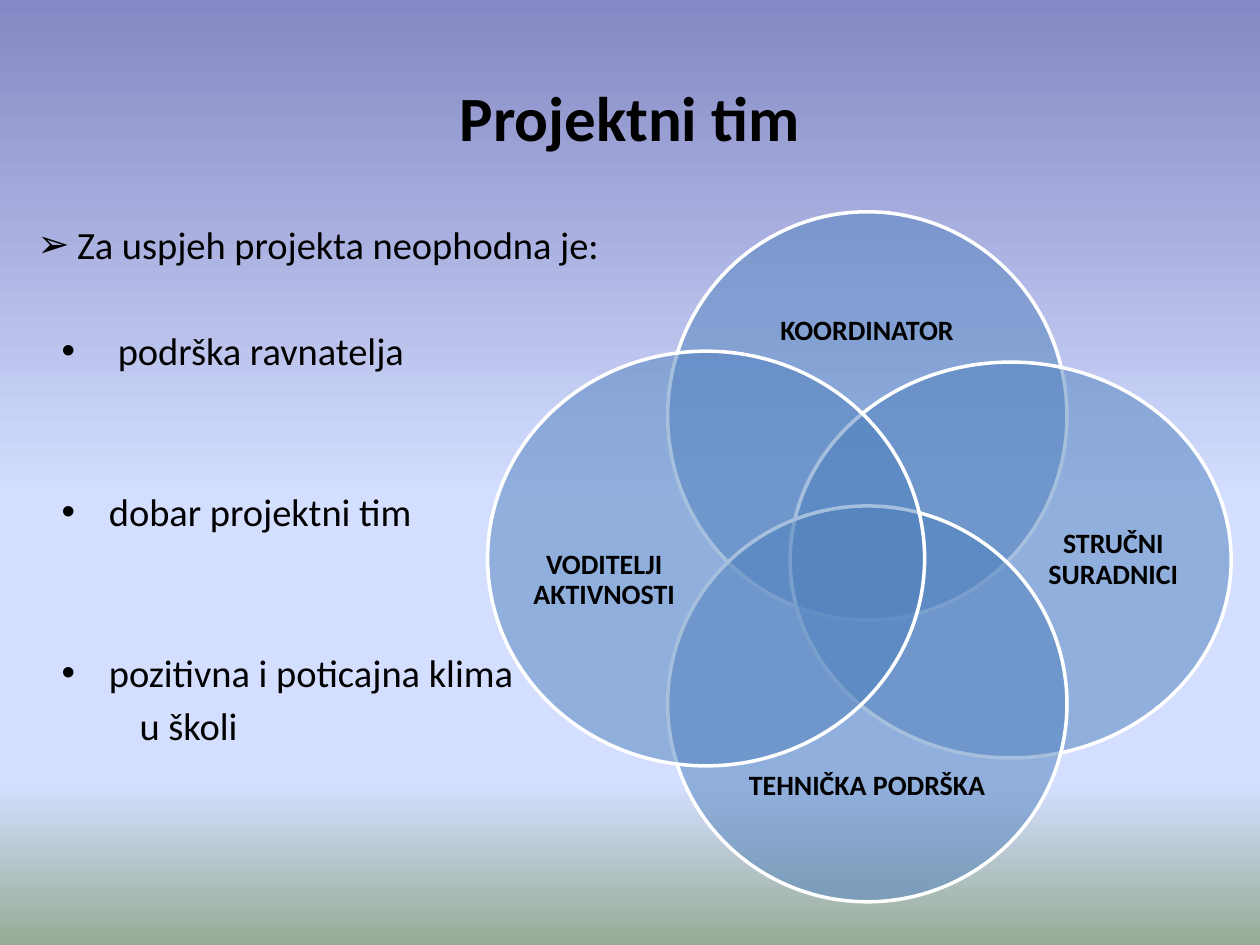
from lxml import etree
from pptx import Presentation
from pptx import util as u
from pptx.dml.color import RGBColor
from pptx.enum import shapes, text
from pptx.oxml.ns import qn

COLORS = {"text": "000000", "circle": "4F81BD", "outline": "FFFFFF"}
BACKGROUND_STOPS = [(0, "8488C4"), (53, "D4DEFF"), (83, "D4DEFF"), (100, "96AB94")]
FONT = "Calibri"


def format_runs(paragraph, size, bold=False):
    for run in paragraph.runs:
        run.font.name = FONT
        run.font.size = u.Pt(size)
        run.font.bold = bold
        run.font.color.rgb = RGBColor.from_string(COLORS["text"])


presentation = Presentation()
presentation.slide_width = u.Cm(25.4)
presentation.slide_height = u.Cm(19.05)
slide = presentation.slides.add_slide(presentation.slide_layouts[1])

# Background: vertical gradient
background = slide.background.fill
background.gradient()
background.gradient_angle = 270
stop_list = slide.element.find(".//" + qn("a:gsLst"))
for stop in list(stop_list):
    stop_list.remove(stop)
for position, color in BACKGROUND_STOPS:
    stop = etree.SubElement(stop_list, qn("a:gs"), pos=str(position * 1000))
    etree.SubElement(stop, qn("a:srgbClr"), val=color)

# Title
title = slide.shapes.title
title.left, title.top, title.width, title.height = u.Cm(1.27), u.Cm(0.76), u.Cm(22.86), u.Cm(3.18)
title.text_frame.text = "Projektni tim"
title.text_frame.vertical_anchor = text.MSO_ANCHOR.MIDDLE
title.text_frame.paragraphs[0].alignment = text.PP_ALIGN.CENTER
format_runs(title.text_frame.paragraphs[0], 36, bold=True)

# List: text, bullet, left margin and first-line indent in cm, space before in pt
items = [
    ("Za uspjeh projekta neophodna je:", "➢", 1.3, -0.8, 3.9),
    ("podrška ravnatelja", "•", 2.12, -1.13, 34.6),
    ("dobar projektni tim", "•", 1.94, -0.95, 65.4),
    ("pozitivna i poticajna klima", "•", 1.94, -0.95, 65.4),
    ("u školi", None, 2.56, 0, 3.9),
]
body = slide.placeholders[1]
body.left, body.top, body.width, body.height = u.Cm(0), u.Cm(4.32), u.Cm(12.5), u.Cm(12.57)
body.text_frame.text = "\n".join(item[0] for item in items)
body.text_frame.auto_size = text.MSO_AUTO_SIZE.NONE
for paragraph, (_, bullet, margin, indent, space) in zip(body.text_frame.paragraphs, items):
    paragraph.space_before = u.Pt(space)
    format_runs(paragraph, 22)
    properties = paragraph._p.get_or_add_pPr()
    properties.set("marL", str(u.Cm(margin)))
    properties.set("indent", str(u.Cm(indent)))
    if bullet:
        etree.SubElement(properties, qn("a:buFont"), typeface="Arial")
        etree.SubElement(properties, qn("a:buChar"), char=bullet)
    else:
        etree.SubElement(properties, qn("a:buNone"))

# Venn diagram: label, circle box and label box in cm
circles = [
    ("KOORDINATOR", (13.46, 4.27, 8.05, 8.23), (14.38, 5.38, 6.2, 2.62)),
    ("STRUČNI SURADNICI", (15.93, 7.3, 8.89, 7.98), (20.73, 8.23, 3.43, 6.12)),
    ("TEHNIČKA PODRŠKA", (13.46, 10.2, 8.05, 7.98), (14.38, 14.58, 6.2, 2.54)),
    ("VODITELJI AKTIVNOSTI", (9.83, 7.08, 8.81, 8.36), (10.49, 8.48, 3.38, 6.43)),
]
venn = slide.shapes.add_group_shape()
for label, circle_box, label_box in circles:
    circle = venn.shapes.add_shape(shapes.MSO_SHAPE.OVAL, *map(u.Cm, circle_box))
    circle.shadow.inherit = False
    circle.fill.solid()
    circle.fill.fore_color.rgb = RGBColor.from_string(COLORS["circle"])
    fill_color = circle.element.spPr.find(qn("a:solidFill")).find(qn("a:srgbClr"))
    etree.SubElement(fill_color, qn("a:alpha"), val="50000")
    circle.line.color.rgb = RGBColor.from_string(COLORS["outline"])
    circle.line.width = u.Pt(2)

    frame = venn.shapes.add_textbox(*map(u.Cm, label_box)).text_frame
    frame.text = label
    frame.word_wrap = True
    frame.vertical_anchor = text.MSO_ANCHOR.MIDDLE
    frame.margin_left = frame.margin_right = frame.margin_top = frame.margin_bottom = 0
    paragraph = frame.paragraphs[0]
    paragraph.alignment = text.PP_ALIGN.CENTER
    paragraph.line_spacing = 0.9
    format_runs(paragraph, 16, bold=True)

presentation.save("out.pptx")
